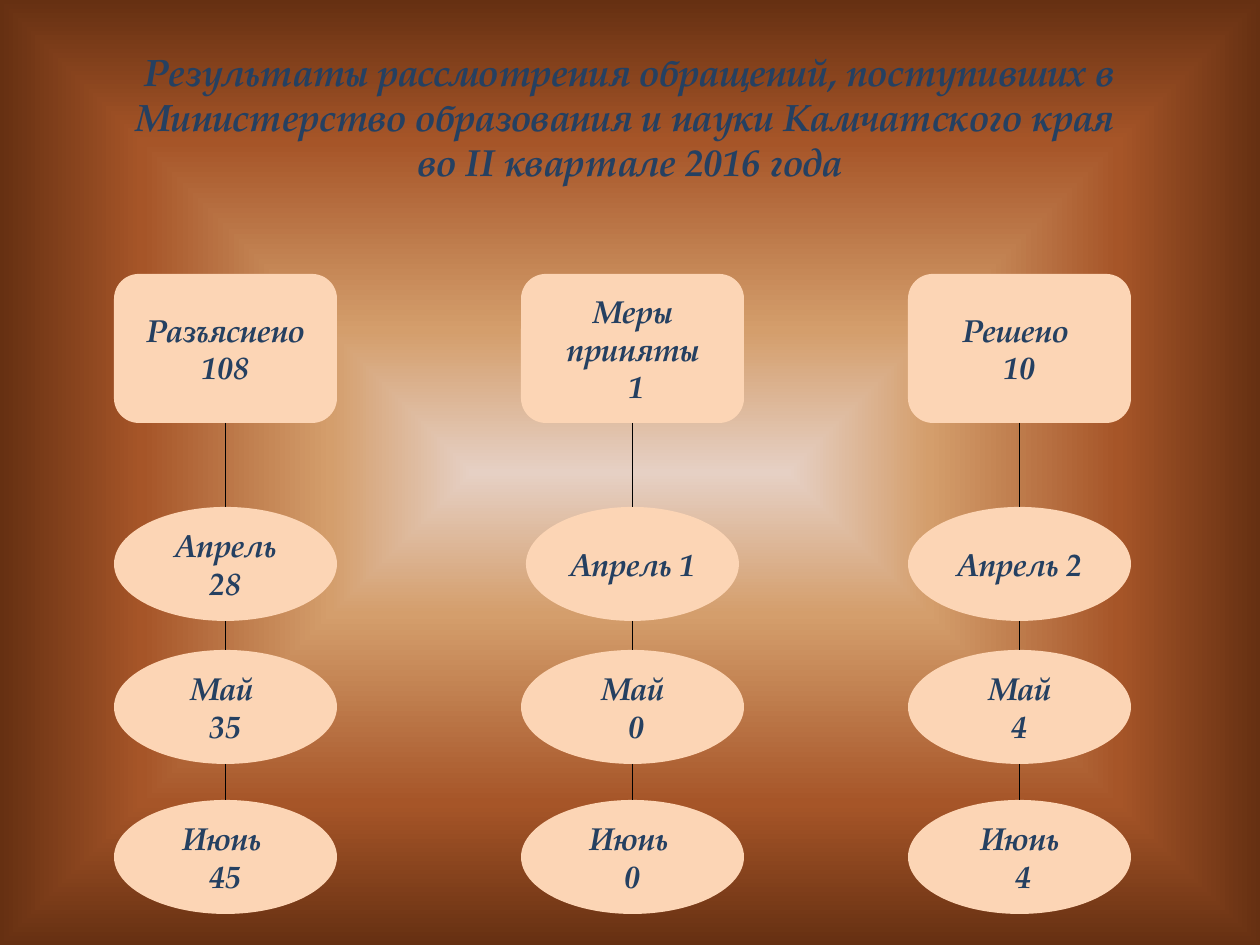
from lxml.etree import SubElement
from pptx import Presentation
from pptx.dml.color import RGBColor
from pptx.enum.shapes import MSO_CONNECTOR, MSO_SHAPE
from pptx.enum.text import MSO_ANCHOR, MSO_AUTO_SIZE, PP_ALIGN
from pptx.oxml.ns import qn
from pptx.util import Emu, Pt

COLORS = {"text": "254061", "fill": "FCD5B5", "line": "000000"}
STOPS = [(0, "E6D0C4"), (30, "D49E6C"), (70, "A65528"), (100, "663012")]
FONT = "TeX Gyre Pagella"
BOX_W, BOX_H, OVAL_H = 223, 149, 114
BOX_Y, OVAL_YS = 274, (507, 650, 800)
COLUMNS = [
    (114, ["Разъяснено", "108"], [["Апрель 28"], ["Май ", "35"], ["Июнь ", "45"]]),
    (521, ["Меры приняты", " 1"], [["Апрель 1"], ["Май", " 0"], ["Июнь ", "0"]]),
    (908, ["Решено ", "10"], [["Апрель 2"], ["Май", "4"], ["Июнь", " 4"]]),
]
OVAL_WIDTHS = {"Апрель 1": 213}


def px(n):
    return Emu(round(n * 914400 / 126))


def rgb(name):
    return RGBColor.from_string(COLORS[name])


class Deck:
    """Holds the text style and the slide being drawn."""

    def __init__(self, s):
        self.s = s

    def background(self, stops):
        self.s.background.fill.gradient()
        grad = self.s.element.xpath(".//p:bgPr/a:gradFill")[0]
        for child in list(grad):
            grad.remove(child)
        gs_lst = SubElement(grad, qn("a:gsLst"))
        for pos, color in stops:
            gs = SubElement(gs_lst, qn("a:gs"), pos=str(pos * 1000))
            SubElement(gs, qn("a:srgbClr"), val=color)
        shade = SubElement(grad, qn("a:path"), path="shape")
        SubElement(shade, qn("a:fillToRect"), l="50000", t="50000", r="50000", b="50000")

    def run(self, p, text, size):
        r = p.add_run()
        r.text = text
        r.font.name, r.font.size = FONT, Pt(size)
        r.font.bold = r.font.italic = True
        r.font.color.rgb = rgb("text")

    def title(self, x, y, w, h, lines, size):
        sp = self.s.shapes.title
        sp.left, sp.top, sp.width, sp.height = map(px, (x, y, w, h))
        tf = sp.text_frame
        tf.auto_size, tf.vertical_anchor = MSO_AUTO_SIZE.NONE, MSO_ANCHOR.MIDDLE
        p = tf.paragraphs[0]
        p.alignment = PP_ALIGN.CENTER
        for i, line in enumerate(lines):
            if i:
                p.add_line_break()
            self.run(p, line, size)

    def node(self, kind, x, y, w, h, lines):
        sp = self.s.shapes.add_shape(kind, *map(px, (x, y, w, h)))
        sp.shadow.inherit = False
        sp.fill.solid()
        sp.fill.fore_color.rgb = rgb("fill")
        sp.line.fill.background()
        tf = sp.text_frame
        tf.word_wrap, tf.vertical_anchor = True, MSO_ANCHOR.MIDDLE
        for i, line in enumerate(lines):
            p = tf.add_paragraph() if i else tf.paragraphs[0]
            p.alignment = PP_ALIGN.CENTER
            self.run(p, line, 18)
        return sp

    def link(self, upper, lower):
        x = upper.left + upper.width // 2
        cx = self.s.shapes.add_connector(
            MSO_CONNECTOR.STRAIGHT, x, upper.top + upper.height, x, lower.top)
        if upper.auto_shape_type == MSO_SHAPE.ROUNDED_RECTANGLE:
            cx.begin_connect(upper, 2)
        cx.end_connect(lower, 0)
        cx.line.color.rgb = rgb("line")
        cx.line.width = Pt(0.75)
        SubElement(cx.element.spPr, qn("a:effectLst"))


def main():
    prs = Presentation()
    prs.slide_width, prs.slide_height = px(1260), px(945)
    deck = Deck(prs.slides.add_slide(prs.slide_layouts[5]))
    deck.background(STOPS)
    deck.title(63, 38, 1134, 157, [
        "Результаты рассмотрения обращений, поступивших в "
        "Министерство образования и науки Камчатского края ",
        "во II квартале 2016 года"], 21.6)
    chains = []
    for x, result, months in COLUMNS:
        chain = [deck.node(MSO_SHAPE.ROUNDED_RECTANGLE, x, BOX_Y, BOX_W, BOX_H, result)]
        for y, lines in zip(OVAL_YS, months):
            w = OVAL_WIDTHS.get(lines[0], BOX_W)
            left = x + (BOX_W - w) // 2
            chain.append(deck.node(MSO_SHAPE.OVAL, left, y, w, OVAL_H, lines))
        chains.append(chain)
    for chain in chains:
        for upper, lower in zip(chain, chain[1:]):
            deck.link(upper, lower)
    prs.save("out.pptx")


if __name__ == "__main__":
    main()
